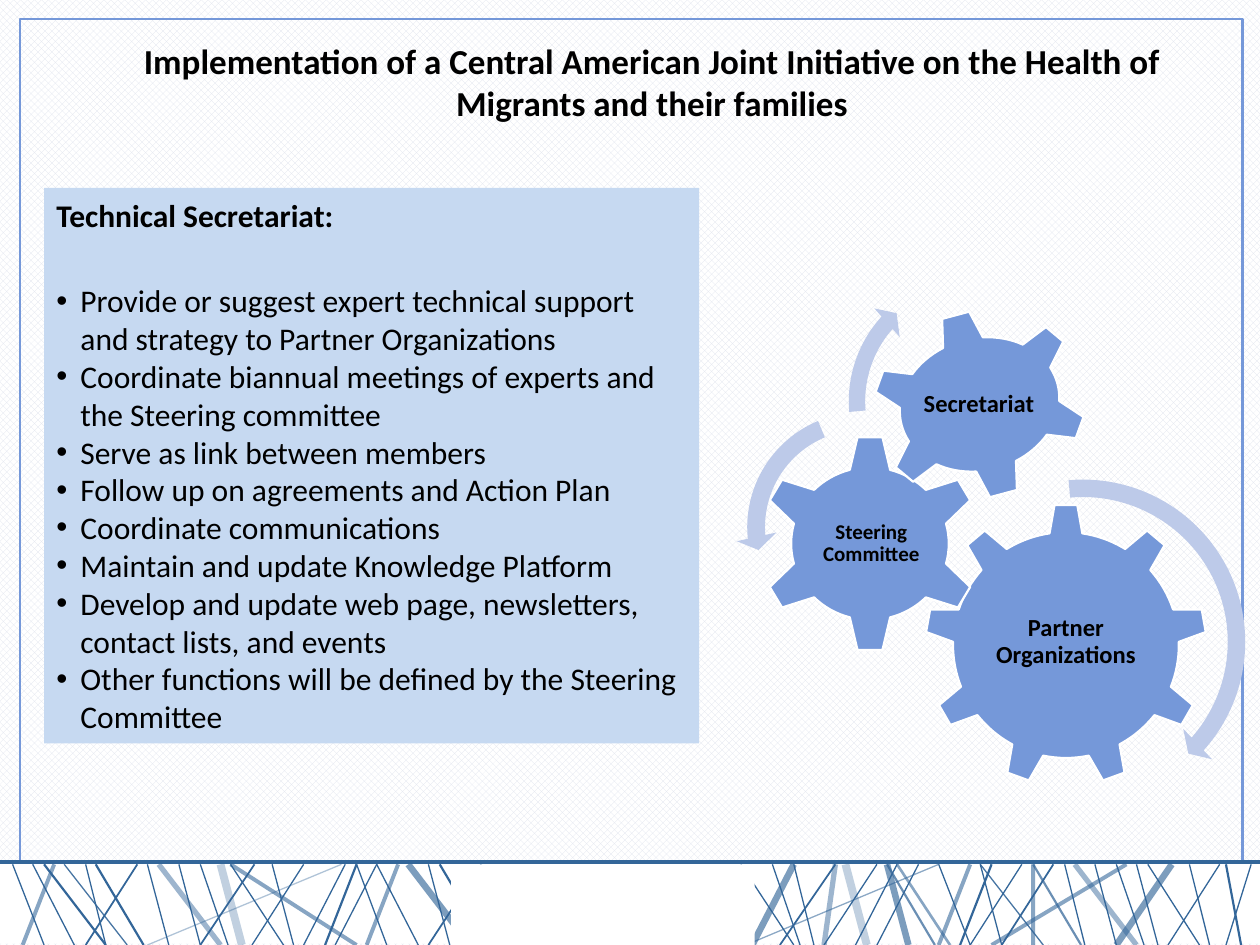
from dataclasses import dataclass
from typing import NamedTuple

import lxml.etree
import pptx
import pptx.dml.color
import pptx.enum.dml
import pptx.enum.shapes
import pptx.enum.text
import pptx.oxml.ns
import pptx.util

Inches = pptx.util.Inches
Pt = pptx.util.Pt
Shape = pptx.enum.shapes.MSO_SHAPE
Align = pptx.enum.text.PP_ALIGN
Anchor = pptx.enum.text.MSO_ANCHOR
qn = pptx.oxml.ns.qn


@dataclass(frozen=True)
class Theme:
    font: str = "Calibri"
    black: str = "000000"
    white: str = "FFFFFF"
    weave: str = "DFE3EE"
    blue: str = "7598D9"
    navy: str = "336699"
    panel: str = "C6D9F1"
    pale: str = "BDCAE9"
    title: float = 20
    body: float = 18
    label: float = 14
    small: float = 12


class Box(NamedTuple):
    left: float
    top: float
    width: float
    height: float


class Gear(NamedTuple):
    kind: int
    box: Box
    turn: float
    text: str
    area: Box
    size: float


class Arc(NamedTuple):
    kind: int
    box: Box
    bends: tuple


class Strands(NamedTuple):
    width: float
    solid: int  # opacity in percent
    ends: tuple  # x at the top, x at the foot


THEME = Theme()
BAND_TOP, FOOT = 6.84, 7.5
STRAND_TOP = 6.86

TITLE = ("Implementation of a Central American Joint Initiative on the Health of "
         "Migrants and their families")
HEADING = "Technical Secretariat:"
TASKS = (
    "Provide or suggest expert technical support and strategy to Partner Organizations",
    "Coordinate biannual meetings of experts and the Steering committee",
    "Serve as link between members",
    "Follow up on agreements and Action Plan",
    "Coordinate communications",
    "Maintain and update Knowledge Platform",
    "Develop and update web page, newsletters, contact lists, and events",
    "Other functions will be defined by the Steering Committee",
)

GEARS = (
    Gear(Shape.GEAR_9, Box(7.34, 4, 2.24, 2.24), 0, "Partner Organizations",
         Box(7.79, 4.52, 1.34, 1.15), THEME.label),
    Gear(Shape.GEAR_6, Box(6.02, 3.45, 1.77, 1.73), 0, "Steering Committee",
         Box(6.47, 3.89, 0.89, 0.85), THEME.small),
    Gear(Shape.GEAR_6, Box(6.91, 2.46, 1.73, 1.5), 345, "Secretariat",
         Box(7.3, 2.78, 0.94, 0.87), THEME.label),
)
ARCS = (
    Arc(Shape.CIRCULAR_ARROW, Box(7.21, 3.71, 2.77, 2.77),
        (0.05, 2.99, 25, 158.96, 0.06)),
    Arc(Shape.LEFT_CIRCULAR_ARROW, Box(5.84, 3.18, 2.01, 2.01),
        (0.07, 4.3, 104.89, 148.38, 0.08)),
    Arc(Shape.CIRCULAR_ARROW, Box(6.65, 2.1, 2.17, 2.17),
        (0.06, 3.94, 133.14, 105.08, 0.07)),
)
WEB = (
    Strands(0.75, 100, (
        (2.16, 2.33), (1.83, 2.25), (2.41, 2), (0.1, 0.35), (0.26, 0.59),
        (0.68, 0.84), (2.74, 2.41), (2.99, 2.66), (1.59, 1.81), (1.17, 1.34),
        (1.42, 1.59), (2.83, 3.07), (2.99, 3.32), (3.4, 3.57), (5.88, 6.3),
        (6.96, 6.54), (6.3, 6.46), (7.29, 6.96), (7.12, 6.79), (6.13, 6.35),
        (7.45, 7.7), (7.78, 7.95), (8.45, 8.61), (8.69, 8.86), (9.44, 9.6),
        (9.11, 9.52), (9.68, 9.27), (9.02, 9.19), (9.93, 9.73), (8.86, 9.08),
        (8.11, 7.7))),
    Strands(0.75, 90, ((0.51, 1.01), (7.78, 8.28))),
    Strands(0.75, 56, ((7.45, 5.92),)),
    Strands(0.75, 39, ((2.71, 1.17),)),
    Strands(1, 100, ((1.09, 0.68), (2.02, 1.59), (3.82, 3.4), (6.63, 6.19),
                     (8.36, 7.95))),
    Strands(1.25, 100, ((0.35, 0.84), (0.76, 1.14), (2.83, 2.58), (3.49, 3.87),
                        (7.87, 7.62), (9.73, 9.85))),
    Strands(1.25, 72, ((8.2, 8.58), (7.04, 7.42))),
    Strands(1.5, 58, ((7.12, 7.54),)),
    Strands(2.25, 58, ((0.43, 0.18), (1.83, 2.83), (3.16, 2.91), (7.7, 7.45),
                       (8.2, 8.2), (8.94, 7.87))),
    Strands(3, 47, ((1.26, 1.75), (8.53, 9.02), (6.63, 6.54))),
    Strands(3.75, 63, ((3.24, 3.73), (9.3, 8.86), (7.04, 7.21), (6.3, 5.97))),
    Strands(4.5, 30, ((1.75, 1.92), (6.71, 6.88))),
)


def rgb(code: str) -> pptx.dml.color.RGBColor:
    return pptx.dml.color.RGBColor.from_string(code)


def place(box: Box) -> tuple:
    return tuple(Inches(side) for side in box)


def add_form(slide, kind, box: Box, fill: str = "", line: str = "", width: float = 1):
    form = slide.shapes.add_shape(kind, *place(box))
    form.shadow.inherit = False
    if fill:
        form.fill.solid()
        form.fill.fore_color.rgb = rgb(fill)
    else:
        form.fill.background()
    if line:
        form.line.color.rgb = rgb(line)
        form.line.width = Pt(width)
    else:
        form.line.fill.background()
    return form


def add_line(slide, start: tuple, end: tuple, width: float, solid: int = 100) -> None:
    line = slide.shapes.add_connector(
        pptx.enum.shapes.MSO_CONNECTOR.STRAIGHT, *map(Inches, start + end))
    line.line.color.rgb = rgb(THEME.navy)
    line.line.width = Pt(width)
    props = line.element.spPr
    if solid < 100:
        tint = props.find(".//" + qn("a:srgbClr"))
        lxml.etree.SubElement(tint, qn("a:alpha"), val=str(solid * 1000))
    lxml.etree.SubElement(props, qn("a:effectLst"))


def style(para, size: float, bold: bool = False, align=Align.LEFT) -> None:
    para.alignment = align
    for run in para.runs:
        run.font.name = THEME.font
        run.font.size = Pt(size)
        run.font.bold = bold
        run.font.color.rgb = rgb(THEME.black)


def add_dot(para) -> None:
    props = para._p.get_or_add_pPr()
    props.set("marL", str(Inches(0.19)))
    props.set("indent", str(-Inches(0.19)))
    lxml.etree.SubElement(props, qn("a:buFont"), typeface="Arial")
    lxml.etree.SubElement(props, qn("a:buChar"), char="•")


def add_title(slide) -> None:
    title = slide.shapes.title
    title.left, title.top, title.width, title.height = place(Box(0.91, 0.26, 8.53, 1.08))
    frame = title.text_frame
    frame.text = TITLE
    frame.word_wrap = True
    frame.auto_size = pptx.enum.text.MSO_AUTO_SIZE.NONE
    frame.vertical_anchor = Anchor.TOP
    style(frame.paragraphs[0], THEME.title, True, Align.CENTER)


def add_panel(slide) -> None:
    panel = add_form(slide, Shape.RECTANGLE, Box(0.35, 1.49, 5.2, 4.41), THEME.panel)
    frame = panel.text_frame
    frame.word_wrap = True
    frame.vertical_anchor = Anchor.MIDDLE
    frame.text = HEADING
    head = frame.paragraphs[0]
    style(head, THEME.body, True)
    head.space_after = Pt(27)
    for task in TASKS:
        para = frame.add_paragraph()
        para.text = task
        add_dot(para)
        style(para, THEME.body)


def add_gear(slide, gear: Gear) -> None:
    wheel = add_form(slide, gear.kind, gear.box, THEME.blue, THEME.white, 1.25)
    wheel.rotation = gear.turn
    frame = slide.shapes.add_textbox(*place(gear.area)).text_frame
    frame.word_wrap = True
    frame.vertical_anchor = Anchor.MIDDLE
    frame.margin_left = frame.margin_right = Inches(0.02)
    frame.margin_top = frame.margin_bottom = Inches(0.02)
    frame.text = gear.text
    para = frame.paragraphs[0]
    para.line_spacing = 0.9
    style(para, gear.size, True, Align.CENTER)


def add_arc(slide, arc: Arc) -> None:
    form = add_form(slide, arc.kind, arc.box, THEME.pale)
    for index, bend in enumerate(arc.bends):
        form.adjustments[index] = bend


def main() -> None:
    deck = pptx.Presentation()
    deck.slide_width, deck.slide_height = Inches(10), Inches(7.5)
    slide = deck.slides.add_slide(deck.slide_layouts[5])

    # Woven background
    back = slide.background.fill
    back.patterned()
    back.pattern = pptx.enum.dml.MSO_PATTERN.from_xml("openDmnd")
    back.fore_color.rgb, back.back_color.rgb = rgb(THEME.weave), rgb(THEME.white)

    # Frame and footer band of crossing strands, open in the middle
    add_form(slide, Shape.RECTANGLE, Box(0.16, 0.15, 9.7, 7.2), line=THEME.blue, width=1.5)
    add_form(slide, Shape.RECTANGLE, Box(0, BAND_TOP, 10, 0.65), THEME.white)
    for group in WEB:
        for head, foot in group.ends:
            add_line(slide, (head, STRAND_TOP), (foot, FOOT), group.width, group.solid)
    add_form(slide, Shape.RECTANGLE, Box(3.58, STRAND_TOP, 2.41, 0.64), THEME.white)
    add_line(slide, (0, BAND_TOP), (10, BAND_TOP), 2.25)

    # Title, task panel and gears
    add_title(slide)
    add_panel(slide)
    for gear in GEARS:
        add_gear(slide, gear)
    for arc in ARCS:
        add_arc(slide, arc)

    deck.save("out.pptx")


if __name__ == "__main__":
    main()
